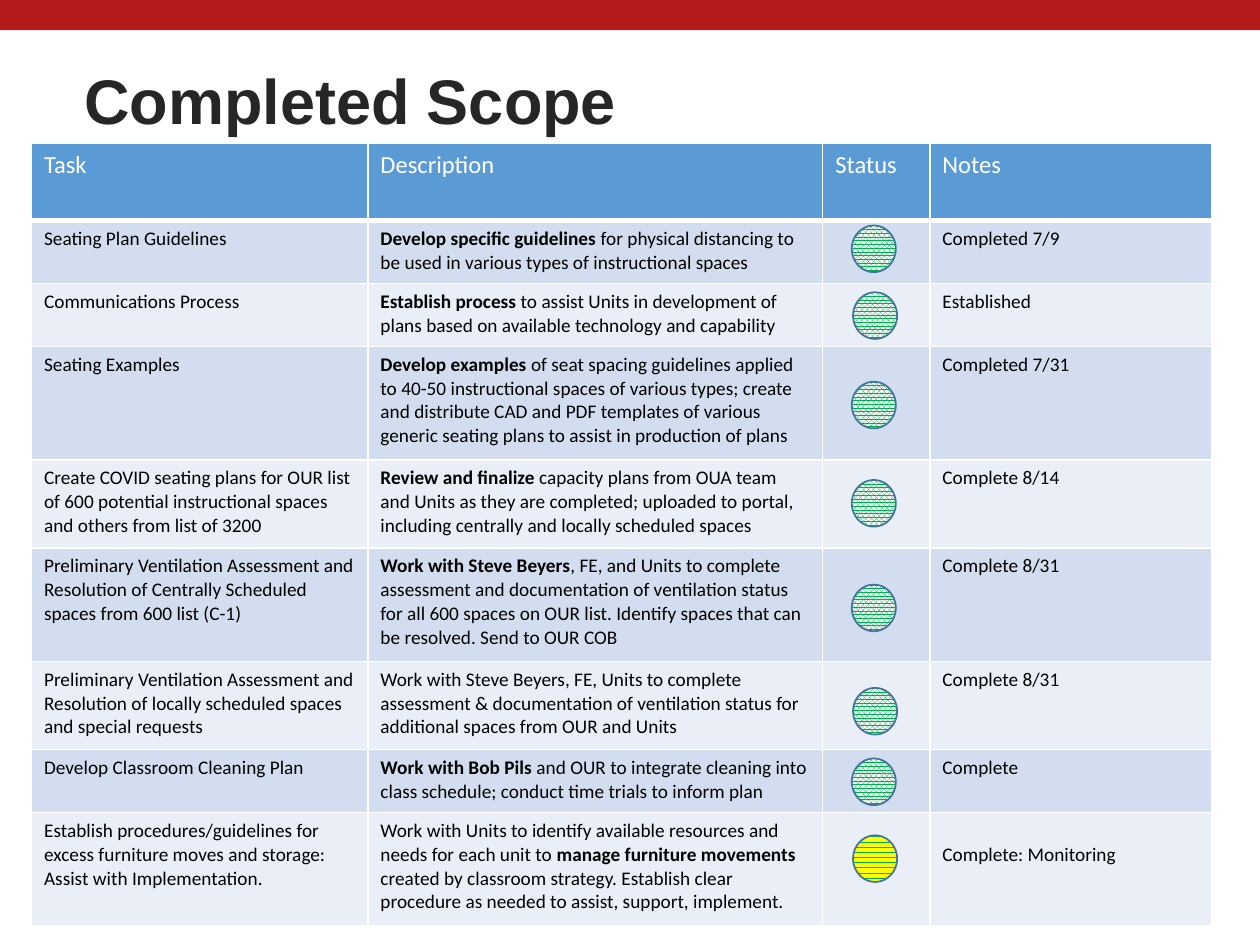
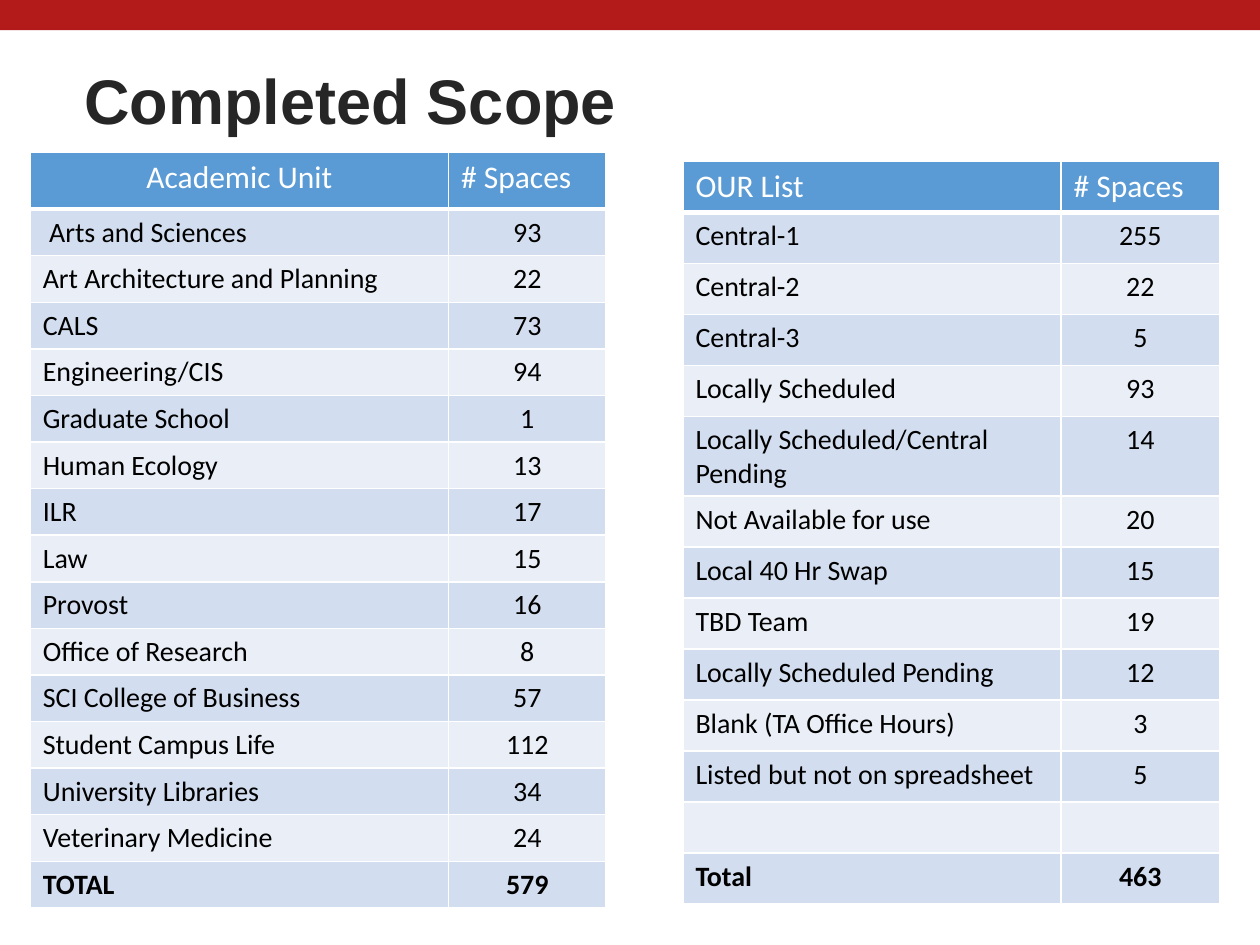
from pptx import Presentation
from pptx.dml.color import RGBColor
from pptx.enum.dml import MSO_PATTERN
from pptx.enum.shapes import MSO_SHAPE
from pptx.enum.text import MSO_ANCHOR, PP_ALIGN
from pptx.oxml import parse_xml
from pptx.oxml.ns import nsdecls
from pptx.util import Inches, Pt

# Colours
RED = RGBColor(0xB3, 0x1B, 0x1B)
INK = RGBColor(0x26, 0x26, 0x26)
BLACK = RGBColor(0, 0, 0)
WHITE = RGBColor(0xFF, 0xFF, 0xFF)
HEADER_BLUE = RGBColor(0x5B, 0x9B, 0xD5)
ROW_FILLS = (RGBColor(0xD2, 0xDE, 0xEF), RGBColor(0xEA, 0xEF, 0xF7))
OUTLINE = RGBColor(0x43, 0x73, 0x9E)
GREEN = RGBColor(0, 0xB0, 0x50)
YELLOW = RGBColor(0xFF, 0xFF, 0)

# Enum members
LEFT, CENTER = PP_ALIGN.LEFT, PP_ALIGN.CENTER
MIDDLE = MSO_ANCHOR.MIDDLE
RECTANGLE, OVAL = MSO_SHAPE.RECTANGLE, MSO_SHAPE.OVAL
DOTS, STRIPES = MSO_PATTERN.PERCENT_80, MSO_PATTERN.DARK_HORIZONTAL

TITLE_FONT, BODY_FONT = "Arial", "Calibri"

# Status marks: pattern, foreground, background
DONE = (DOTS, GREEN, WHITE)
MONITORING = (STRIPES, YELLOW, GREEN)

# Each task: name, (plain lead, bold part, plain rest), notes
TASKS = [
    ("Seating Plan Guidelines",
     ("", "Develop specific guidelines ",
      "for physical distancing to be used in various types of instructional spaces"),
     "Completed 7/9"),
    ("Communications Process",
     ("", "Establish process ",
      "to assist Units in development of plans based on available technology and capability"),
     "Established"),
    ("Seating Examples",
     ("", "Develop examples ",
      "of seat spacing guidelines applied to 40-50 instructional spaces of various types; "
      "create and distribute CAD and PDF templates of various generic seating plans "
      "to assist in production of plans"),
     "Completed 7/31"),
    ("Create COVID seating plans for OUR list of 600 potential instructional spaces "
     "and others from list of 3200",
     ("", "Review and finalize ",
      "capacity plans from OUA team and Units as they are completed; uploaded to portal, "
      "including centrally and locally scheduled spaces"),
     "Complete 8/14"),
    ("Preliminary Ventilation Assessment and Resolution of Centrally Scheduled spaces "
     "from 600 list (C-1)",
     ("", "Work with Steve Beyers",
      ", FE, and Units to complete assessment and documentation of ventilation status "
      "for all 600 spaces on OUR list. Identify spaces that can be resolved. "
      "Send to OUR COB"),
     "Complete 8/31"),
    ("Preliminary Ventilation Assessment and Resolution of locally scheduled spaces "
     "and special requests",
     ("Work with Steve Beyers, FE, Units to complete assessment & documentation of "
      "ventilation status for additional spaces from OUR and Units", "", ""),
     "Complete 8/31"),
    ("Develop Classroom Cleaning Plan",
     ("", "Work with Bob Pils ",
      "and OUR to integrate cleaning into class schedule; "
      "conduct time trials to inform plan"),
     "Complete"),
    ("Establish procedures/guidelines for excess furniture moves and storage: "
     "Assist with Implementation.",
     ("Work with Units to identify available resources and needs for each unit to ",
      "manage furniture movements ",
      "created by classroom strategy. Establish clear procedure as needed to assist, "
      "support, implement."),
     "Complete: Monitoring"),
]
TASK_ROW_HEIGHTS = [0.61, 0.5, 0.5, 0.9, 0.7, 0.9, 0.7, 0.5, 0.9]

# Left and top of each status mark, from the first task down
STATUS_MARKS = [(6.76, 1.79), (6.77, 2.32), (6.76, 3.03), (6.76, 3.81),
                (6.76, 4.64), (6.77, 5.46), (6.76, 6.02), (6.77, 6.63)]

ACADEMIC_UNITS = [
    ("Academic Unit", "# Spaces"), (" Arts and Sciences", "93"),
    ("Art Architecture and Planning", "22"), ("CALS", "73"),
    ("Engineering/CIS", "94"), ("Graduate School", "1"), ("Human Ecology", "13"),
    ("ILR", "17"), ("Law", "15"), ("Provost", "16"), ("Office of Research", "8"),
    ("SCI College of Business", "57"), ("Student Campus Life", "112"),
    ("University Libraries", "34"), ("Veterinary Medicine", "24"), ("TOTAL", "579"),
]
OUR_LIST = [
    ("OUR List", "# Spaces"), ("Central-1", "255"), ("Central-2", "22"),
    ("Central-3", "5"), ("Locally Scheduled", "93"),
    ("Locally Scheduled/Central Pending", "14"), ("Not Available for use", "20"),
    ("Local 40 Hr Swap", "15"), ("TBD Team", "19"), ("Locally Scheduled Pending", "12"),
    ("Blank (TA Office Hours)", "3"), ("Listed but not on spreadsheet", "5"),
    ("", ""), ("Total", "463"),
]


class Slides:
    """Holds the deck, the shared style and the current page."""

    def __init__(self):
        self.deck = Presentation()
        self.deck.slide_width, self.deck.slide_height = Inches(10), Inches(7.5)
        self.page = None

    def new_page(self, title):
        self.page = self.deck.slides.add_slide(self.deck.slide_layouts[6])
        # Top band
        band = self.shape(RECTANGLE, 0, 0, 10, 0.24)
        band.fill.solid()
        band.fill.fore_color.rgb = RED
        band.line.fill.background()
        # Title
        box = self.page.shapes.add_textbox(Inches(0.57), Inches(0.42),
                                           Inches(9.19), Inches(0.73))
        box.text_frame.word_wrap = True
        box.text_frame.vertical_anchor = MIDDLE
        self.span(box.text_frame.paragraphs[0], title, 36, INK, True, TITLE_FONT)

    def shape(self, kind, left, top, width, height):
        shape = self.page.shapes.add_shape(kind, Inches(left), Inches(top),
                                           Inches(width), Inches(height))
        shape.shadow.inherit = False
        return shape

    def span(self, para, text, size, color, bold=False, font=BODY_FONT):
        span = para.add_run()
        span.text = text
        span.font.name, span.font.size, span.font.bold = font, Pt(size), bold
        span.font.color.rgb = color

    def status_mark(self, left, top, style):
        mark = self.shape(OVAL, left, top, 0.35, 0.37)
        mark.fill.patterned()
        mark.fill.pattern, mark.fill.fore_color.rgb, mark.fill.back_color.rgb = style
        mark.line.color.rgb = OUTLINE
        mark.line.width = Pt(1)

    def table(self, left, top, widths, heights):
        frame = self.page.shapes.add_table(
            len(heights), len(widths), Inches(left), Inches(top),
            Inches(sum(widths)), Inches(sum(heights)))
        table = frame.table
        for column, width in zip(table.columns, widths):
            column.width = Inches(width)
        for row, height in zip(table.rows, heights):
            row.height = Inches(height)
        for index, row in enumerate(table.rows):
            for cell in row.cells:
                self.borders(cell, 3 if index == 0 else 1)
                cell.fill.solid()
                cell.fill.fore_color.rgb = ROW_FILLS[(index - 1) % 2] if index else HEADER_BLUE
        return table

    def borders(self, cell, bottom):
        properties = cell._tc.get_or_add_tcPr()
        for side, width in zip("LRTB", (1, 1, 1, bottom)):
            properties.append(parse_xml(
                f'<a:ln{side} {nsdecls("a")} w="{Pt(width)}"><a:solidFill>'
                f'<a:srgbClr val="{WHITE}"/></a:solidFill></a:ln{side}>'))

    def cell_text(self, cell, parts, size, color, align=LEFT):
        """Write (text, bold) parts into a cell, leaving out empty ones."""
        para = cell.text_frame.paragraphs[0]
        para.alignment = align
        for text, bold in parts:
            if text:
                self.span(para, text, size, color, bold)

    def task_table(self):
        table = self.table(0.25, 1.14, [2.67, 3.61, 0.85, 2.24], TASK_ROW_HEIGHTS)
        for column, heading in enumerate(("Task", "Description", "Status", "Notes")):
            self.cell_text(table.cell(0, column), [(heading, False)], 14, WHITE)
        for row, (task, (lead, strong, rest), notes) in enumerate(TASKS, 1):
            description = [(lead, False), (strong, True), (rest, False)]
            for column, parts in ((0, [(task, False)]), (1, description),
                                  (3, [(notes, False)])):
                self.cell_text(table.cell(row, column), parts, 11, BLACK)
        # The last note starts one line lower
        table.cell(len(TASKS), 3).margin_top = Inches(0.24)

    def count_table(self, left, top, widths, heights, rows, heading_align=LEFT):
        table = self.table(left, top, widths, heights)
        last = len(rows) - 1
        for row, (name, count) in enumerate(rows):
            size, color = (16, BLACK) if row else (18, WHITE)
            aligns = (LEFT, CENTER) if row else (heading_align, LEFT)
            for column, text in enumerate((name, count)):
                self.cell_text(table.cell(row, column), [(text, row == last)],
                               size, color, aligns[column])


def main():
    slides = Slides()

    # Slide 1: tasks with their status
    slides.new_page("Completed Scope")
    slides.task_table()
    for index, (left, top) in enumerate(STATUS_MARKS, 1):
        slides.status_mark(left, top, MONITORING if index == len(TASKS) else DONE)

    # Slide 2: space counts by unit and by list
    slides.new_page("Completed Scope")
    slides.count_table(0.24, 1.21, [3.32, 1.25], [0.45] + [0.37] * 15,
                       ACADEMIC_UNITS, CENTER)
    list_heights = [5.67 / len(OUR_LIST)] * len(OUR_LIST)
    slides.count_table(5.42, 1.28, [3, 1.26], list_heights, OUR_LIST)

    slides.deck.save("out.pptx")


if __name__ == "__main__":
    main()
